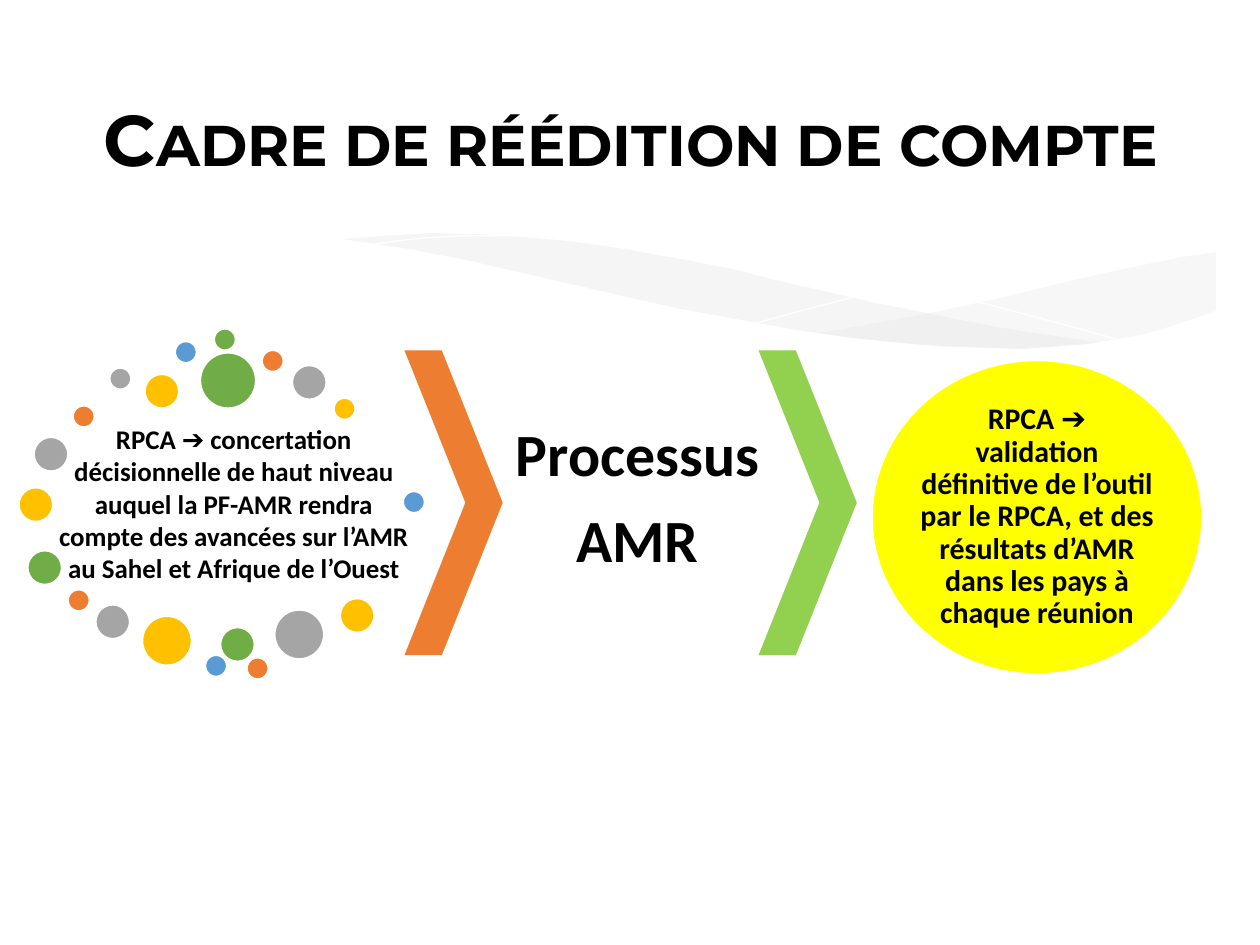
"""Build the accountability framework slide: dotted ring, two chevrons and a yellow disc."""
import pptx
import pptx.dml.color
import pptx.enum.shapes
import pptx.enum.text
import pptx.oxml.ns
import pptx.oxml.xmlchemy
import pptx.util

RGBColor = pptx.dml.color.RGBColor
Shapes = pptx.enum.shapes.MSO_SHAPE
BLACK = RGBColor(0x00, 0x00, 0x00)
WHITE = RGBColor(0xFF, 0xFF, 0xFF)
MIST = RGBColor(0xE7, 0xE6, 0xE6)
ORANGE = RGBColor(0xED, 0x7D, 0x31)
GREY = RGBColor(0xA5, 0xA5, 0xA5)
GOLD = RGBColor(0xFF, 0xC0, 0x00)
BLUE = RGBColor(0x5B, 0x9B, 0xD5)
GREEN = RGBColor(0x70, 0xAD, 0x47)
LIME = RGBColor(0x92, 0xD0, 0x50)
YELLOW = RGBColor(0xFF, 0xFF, 0x00)

WAVE_UNIT = pptx.util.Cm(0.0254)
WAVES = [
    {"fill": MIST, "opacity": 29, "points": [
        (965, 200), (938, 204), (909, 210), (880, 216), (849, 223), (792, 237), (740, 248),
        (692, 257), (647, 265), (677, 269), (705, 272), (731, 275), (756, 277), (790, 278),
        (822, 277), (851, 275), (878, 272), (902, 267), (924, 262), (939, 257), (965, 247)]},
    {"fill": MIST, "opacity": 40, "points": [
        (881, 273), (854, 269), (825, 265), (794, 260), (762, 254), (728, 247), (692, 240),
        (654, 231), (614, 222), (583, 214), (553, 208), (525, 203), (498, 198), (472, 194),
        (447, 191), (424, 189), (402, 187), (381, 186), (343, 185), (309, 187), (280, 189),
        (267, 191), (304, 196), (344, 203), (386, 211), (432, 222), (474, 232), (513, 240),
        (550, 248), (586, 255), (619, 261), (651, 266), (680, 270), (709, 274), (735, 276),
        (772, 278), (816, 278), (845, 277)]},
    {"line": WHITE, "points": [
        (290, 195), (309, 192), (334, 189), (369, 187), (415, 187), (452, 189), (493, 192),
        (540, 197), (593, 204), (650, 213), (713, 226), (782, 241), (857, 261), (896, 272)]},
    {"line": WHITE, "points": [
        (598, 257), (638, 246), (681, 235), (734, 223), (793, 210), (854, 199), (899, 192),
        (940, 187), (965, 185)]},
    {"fill": WHITE, "opacity": 100, "points": [
        (967, 246), (948, 253), (929, 259), (909, 265), (887, 269), (864, 273), (838, 275),
        (811, 277), (781, 276), (748, 275), (713, 272), (674, 268), (633, 262), (588, 254),
        (539, 245), (486, 233), (429, 220), (373, 207), (321, 197), (273, 190), (230, 186),
        (191, 184), (139, 184), (97, 187), (63, 193), (36, 199), (17, 205), (0, 213),
        (0, 329), (967, 329)]},
]
DOTS = {
    0.17: [(0.58, 3.22, ORANGE), (0.87, 2.92, GREY), (1.39, 2.71, BLUE), (1.7, 2.61, GREEN),
           (2.08, 2.78, ORANGE), (2.65, 3.16, GOLD), (3.2, 3.9, BLUE), (0.54, 4.68, ORANGE),
           (1.63, 5.2, BLUE), (1.96, 5.22, ORANGE)],
    0.27: [(0.15, 3.87, GOLD), (1.15, 2.97, GOLD), (2.32, 2.9, GREY), (0.76, 4.8, GREY),
           (1.75, 4.98, GREEN), (2.7, 4.75, GOLD), (0.27, 3.47, GREY), (0.22, 4.37, GREEN)],
    0.39: [(1.13, 4.89, GOLD), (2.18, 4.84, GREY)],
    0.44: [(1.59, 2.8, GREEN)],
}
CHEVRONS = [(3.21, ORANGE), (6.02, LIME)]
DISC = (6.92, 2.86, 2.62, 2.49)
DISC_TEXT = ["RPCA ➔\vvalidation définitive de l’outil par le RPCA, et des résultats "
             "d’AMR dans les pays à chaque réunion"]
LABELS = [
    {"box": (0.07, 0.42, 10, 1.43), "inset": 0.1, "size": 41, "font": "Montserrat",
     "spacing": 0.9, "after": 0, "caps": True, "lines": ["Cadre de réédition de compte "]},
    {"box": (0.43, 3.29, 2.85, 1.41), "inset": 0.02, "size": 15.4, "font": "Calibri",
     "spacing": 1.0, "after": 0,
     "lines": ["RPCA ➔ concertation décisionnelle de haut niveau auquel la PF-AMR rendra "
               "compte des avancées sur l’AMR", "au Sahel et Afrique de l’Ouest"]},
    {"box": (3.99, 3.22, 2.14, 1.5), "inset": 0.05, "size": 34.2, "font": "Calibri",
     "spacing": 0.9, "after": 12, "lines": ["Processus", "AMR"]},
]


def length(inches):
    return pptx.util.Cm(inches * 2.54)


def set_all(target, values):
    for name, value in values.items():
        setattr(target, name, value)


def paint(shape, fill=None, line=None, width=1):
    shape.shadow.inherit = False
    if fill is None:
        shape.fill.background()
    else:
        shape.fill.solid()
        shape.fill.fore_color.rgb = fill
    if line is None:
        shape.line.fill.background()
    else:
        shape.line.color.rgb = line
        shape.line.width = pptx.util.Pt(width)


def add_wave(slide, wave):
    (start_x, start_y), *others = wave["points"]
    builder = slide.shapes.build_freeform(start_x, start_y, scale=WAVE_UNIT)
    builder.add_line_segments(others, close="fill" in wave)
    shape = builder.convert_to_shape()
    paint(shape, wave.get("fill"), wave.get("line"), width=0)
    if wave.get("opacity", 100) < 100:
        color = shape._element.spPr.find(".//" + pptx.oxml.ns.qn("a:srgbClr"))
        alpha = pptx.oxml.xmlchemy.OxmlElement("a:alpha")
        alpha.set("val", str(wave["opacity"] * 1000))
        color.append(alpha)


def add_shape(slide, kind, box, fill, line=None):
    shape = slide.shapes.add_shape(kind, *map(length, box))
    paint(shape, fill, line)
    return shape


def write(shape, lines, inset, size, font, spacing, after, caps=False):
    frame = shape.text_frame
    margins = {f"margin_{side}": length(inset) for side in ("left", "top", "right", "bottom")}
    set_all(frame, {"word_wrap": True, **margins,
                    "vertical_anchor": pptx.enum.text.MSO_ANCHOR.MIDDLE})
    for index, text in enumerate(lines):
        paragraph = frame.add_paragraph() if index else frame.paragraphs[0]
        paragraph.text = text
        set_all(paragraph, {"alignment": pptx.enum.text.PP_ALIGN.CENTER,
                            "line_spacing": spacing, "space_after": pptx.util.Pt(after)})
        for run in paragraph.runs:
            set_all(run.font, {"name": font, "size": pptx.util.Pt(size), "bold": True})
            run.font.color.rgb = BLACK
            if caps:
                run._r.get_or_add_rPr().set("cap", "small")


def main():
    presentation = pptx.Presentation()
    set_all(presentation, {"slide_width": length(10), "slide_height": length(7.5)})
    slide = presentation.slides.add_slide(presentation.slide_layouts[6])
    for wave in WAVES:
        add_wave(slide, wave)
    for size, dots in DOTS.items():
        for left, top, color in dots:
            add_shape(slide, Shapes.OVAL, (left, top, size, size), color, WHITE)
    for left, color in CHEVRONS:
        chevron = add_shape(slide, Shapes.CHEVRON, (left, 2.78, 0.78, 2.42), color)
        chevron.adjustments[0] = 0.62
    disc = add_shape(slide, Shapes.OVAL, DISC, YELLOW, WHITE)
    write(disc, DISC_TEXT, inset=0, size=17.1, font="Calibri", spacing=0.9, after=0)
    for label in LABELS:
        style = dict(label)
        box = slide.shapes.add_textbox(*map(length, style.pop("box")))
        write(box, **style)
    presentation.save("out.pptx")


if __name__ == "__main__":
    main()
